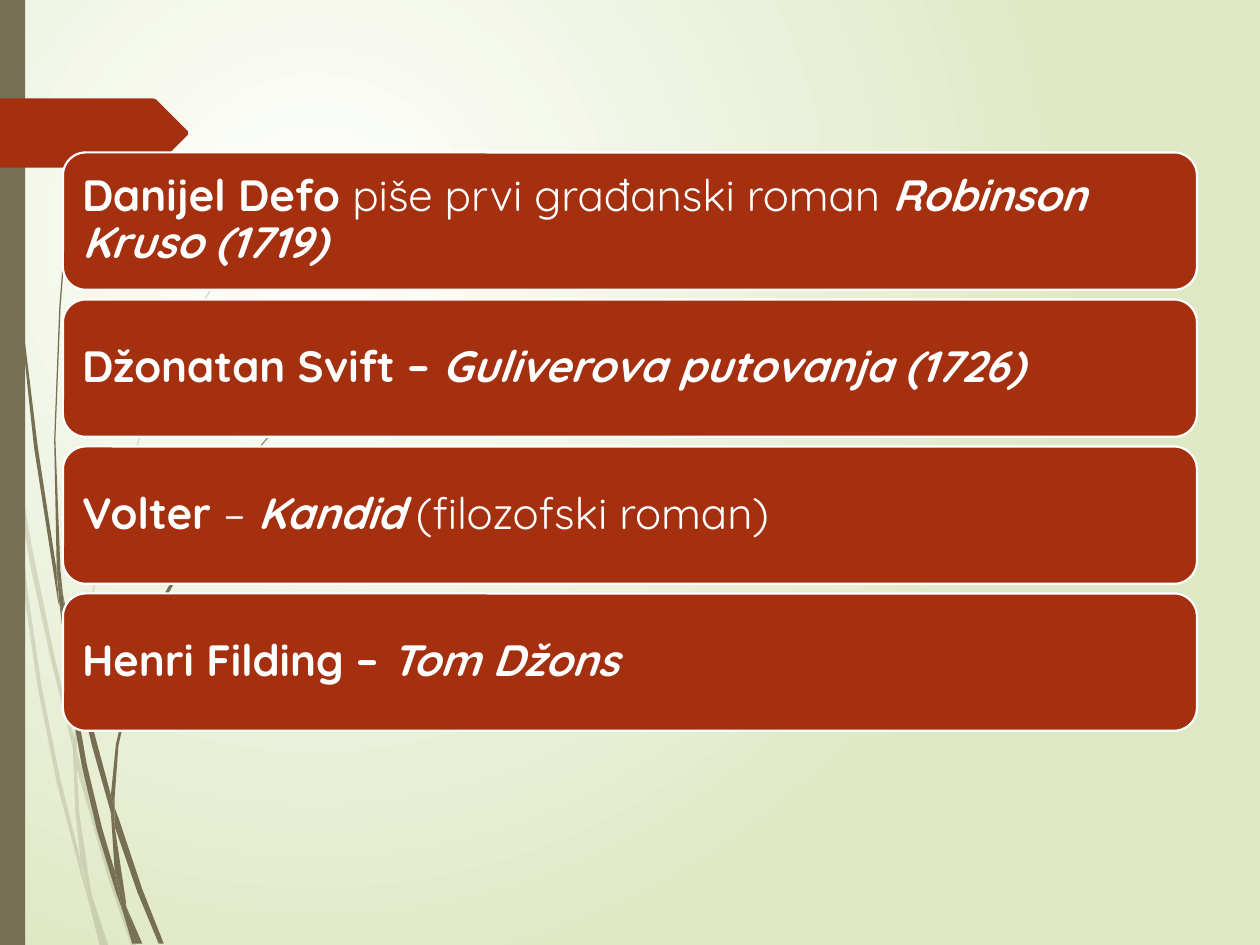
from dataclasses import dataclass

from lxml import etree
from pptx import Presentation
from pptx.dml.color import RGBColor as Color
from pptx.enum.shapes import MSO_SHAPE as Preset
from pptx.enum.text import MSO_ANCHOR as Anchor, PP_ALIGN as Align
from pptx.oxml.ns import qn
from pptx.util import Inches, Pt


@dataclass(frozen=True)
class Theme:
    red: Color = Color.from_string("A53010")
    olive: Color = Color.from_string("766F54")
    green: Color = Color.from_string("DFE8C4")
    white: Color = Color.from_string("FFFFFF")
    font: str = "Quicksand"
    text_size: int = Pt(25)
    outline: int = Pt(1.25)
    pale_alpha: int = 20


theme = Theme()

# Corners of each grass blade, in inches.
PALE_WISPS = [
    [(0.08, 3.5), (0.06, 3.22), (0, 2.82), (0, 2.99), (0.07, 3.44)],
    [(0.4, 5.22), (0.59, 5.99), (0.59, 5.86), (0.43, 5.2), (0.25, 4.33), (0.1, 3.45),
     (0.12, 3.76), (0.24, 4.49)],
    [(0.64, 6.07), (0.61, 5.96), (0.61, 6.1), (0.85, 6.94), (1.04, 7.5), (1.08, 7.5), (0.88, 6.92)],
    [(0.83, 7.5), (0.86, 7.5), (0.73, 7.11)],
    [(0.64, 6.83), (0.48, 6.19), (0.33, 5.45), (0.22, 4.69), (0.12, 3.76), (0.08, 3.5),
     (0.12, 4.1), (0.19, 4.7), (0.3, 5.46), (0.45, 6.21), (0.64, 6.93), (0.7, 7.14), (0.69, 7.07)],
    [(0.58, 5.99), (0.6, 6.46), (0.64, 6.83), (0.67, 6.92), (0.73, 7.11), (0.72, 7.06),
     (0.63, 6.46), (0.61, 6.1), (0.61, 6.08)],
    [(0.61, 5.84), (0.66, 5.22), (0.76, 4.62), (1.11, 3.49), (1.59, 2.45), (1.87, 1.98),
     (2.01, 1.75), (2.17, 1.54), (2.17, 1.53), (2.01, 1.75), (1.86, 1.97), (1.58, 2.44),
     (1.1, 3.48), (0.75, 4.61), (0.64, 5.22), (0.59, 5.84), (0.59, 5.86), (0.61, 5.96)],
    [(0.7, 7.14), (0.79, 7.5), (0.82, 7.5)],
    [(0.61, 6.08), (0.61, 6.1), (0.61, 5.96), (0.59, 5.86), (0.58, 5.99)],
    [(0.67, 6.92), (0.65, 6.83), (0.69, 7.07), (0.7, 7.14), (0.82, 7.5), (0.83, 7.5), (0.73, 7.11)],
]
DARK_WISPS = [
    [(0.05, 1.1), (0.14, 2.33), (0.27, 3.55), (0.46, 4.77), (0.47, 4.81), (0.45, 4.57),
     (0.45, 4.53), (0.3, 3.55), (0.15, 2.32), (0.06, 1.09), (0.04, 0.48), (0.03, 0), (0.02, 0),
     (0.03, 0.48)],
    [(0.73, 5.92), (0.88, 6.45), (0.88, 6.31), (0.77, 5.9), (0.62, 5.32), (0.5, 4.72), (0.53, 5.05)],
    [(0.94, 6.49), (0.91, 6.41), (0.91, 6.56), (1.09, 7.08), (1.26, 7.49), (1.3, 7.49), (1.13, 7.06)],
    [(0.91, 6.91), (0.81, 6.57), (0.69, 6.07), (0.6, 5.56), (0.53, 5.05), (0.47, 4.77),
     (0.56, 5.57), (0.65, 6.08), (0.77, 6.59), (0.92, 7.08), (0.97, 7.22), (0.96, 7.17)],
    [(0.5, 4.72), (0.48, 4.53), (0.44, 3.49), (0.48, 2.45), (0.52, 1.93), (0.58, 1.41),
     (0.51, 1.93), (0.47, 2.45), (0.43, 3.49), (0.45, 4.49), (0.49, 4.72)],
    [(1.1, 7.49), (1.13, 7.49), (1, 7.19)],
    [(0.47, 4.77), (0.53, 5.05), (0.5, 4.72), (0.49, 4.72), (0.45, 4.49), (0.45, 4.53)],
    [(0.91, 6.33), (0.94, 5.92), (1.03, 5.52), (1.31, 4.76), (1.69, 4.06), (1.91, 3.74),
     (2.03, 3.59), (2.16, 3.44), (2.15, 3.44), (2.03, 3.58), (1.91, 3.73), (1.68, 4.05),
     (1.29, 4.74), (1.01, 5.51), (0.92, 5.91), (0.88, 6.31), (0.91, 6.41)],
    [(0.97, 7.22), (1.05, 7.49), (1.08, 7.49)],
    [(0.88, 6.45), (0.91, 6.91), (0.96, 7.06), (1, 7.19), (1, 7.16), (0.91, 6.56), (0.9, 6.51)],
    [(0.88, 6.45), (0.9, 6.51), (0.91, 6.56), (0.91, 6.41), (0.88, 6.31)],
    [(0.96, 7.06), (0.91, 6.91), (0.96, 7.17), (0.97, 7.22), (1.08, 7.49), (1.1, 7.49), (1, 7.19)],
]
TAG_CORNERS = [(0, 0.78), (1.21, 0.78), (1.24, 0.79), (1.49, 1.04), (1.49, 1.07),
               (1.24, 1.32), (1.21, 1.33), (0, 1.33)]

# Each card: runs of text, bold, italic.
CARDS = [
    [("Danijel Defo ", True, False), ("piše prvi građanski roman ", False, False),
     ("Robinson Kruso (1719)", True, True)],
    [("Džonatan Svift – ", True, False), ("Guliverova putovanja (1726)", True, True)],
    [("Volter ", True, False), ("– ", False, False), ("Kandid", True, True),
     (" (filozofski roman)", False, False)],
    [("Henri Filding – ", True, False), ("Tom Džons", True, True)],
]
CARD_TOP, CARD_PITCH = 1.21, 3.5 / 3


def paint(shape, color):
    """Give a shape a plain fill, with no line and no shadow."""
    shape.shadow.inherit = False
    shape.fill.solid()
    shape.fill.fore_color.rgb = color
    shape.line.fill.background()


def add_polygon(corners, color):
    start, *rest = [(Inches(x), Inches(y)) for x, y in corners]
    builder = slide.shapes.build_freeform(*start)
    builder.add_line_segments(rest, close=True)
    shape = builder.convert_to_shape()
    paint(shape, color)
    return shape


deck = Presentation()
deck.slide_width, deck.slide_height = Inches(10), Inches(7.5)
slide = deck.slides.add_slide(deck.slide_layouts[6])

backdrop = slide.background.fill
backdrop.gradient()
for stop, color, position in zip(backdrop.gradient_stops, (theme.white, theme.green), (0, 1)):
    stop.color.rgb = color
    stop.position = position
gradient = slide.element.find(".//" + qn("a:gradFill"))
gradient.remove(gradient.find(qn("a:lin")))
glow = etree.SubElement(gradient, qn("a:path"), path="circle")
etree.SubElement(glow, qn("a:fillToRect"), l="50000", t="50000", r="100000", b="100000")

for wisp in PALE_WISPS:
    shape = add_polygon(wisp, theme.olive)
    tint = shape.element.spPr.find(qn("a:solidFill"))[0]
    etree.SubElement(tint, qn("a:alpha"), val=str(theme.pale_alpha * 1000))
for wisp in DARK_WISPS:
    add_polygon(wisp, theme.olive)

bar = slide.shapes.add_shape(Preset.RECTANGLE, 0, 0, Inches(0.2), deck.slide_height)
paint(bar, theme.olive)
add_polygon(TAG_CORNERS, theme.red)

frame_format = {"word_wrap": True, "vertical_anchor": Anchor.MIDDLE}
frame_format.update({f"margin_{side}": Inches(0.1) for side in ("left", "top", "right", "bottom")})
for row, runs in enumerate(CARDS):
    card = slide.shapes.add_shape(Preset.ROUNDED_RECTANGLE, Inches(0.5),
                                  Inches(CARD_TOP + row * CARD_PITCH), Inches(9), Inches(1.09))
    paint(card, theme.red)
    card.line.color.rgb = theme.white
    card.line.width = theme.outline
    for name, value in frame_format.items():
        setattr(card.text_frame, name, value)
    para = card.text_frame.paragraphs[0]
    para.alignment = Align.LEFT
    para.line_spacing = 0.9
    for text, bold, italic in runs:
        span = para.add_run()
        span.text = text
        font_format = {"name": theme.font, "size": theme.text_size, "bold": bold, "italic": italic}
        for name, value in font_format.items():
            setattr(span.font, name, value)
        span.font.color.rgb = theme.white

deck.save("out.pptx")
